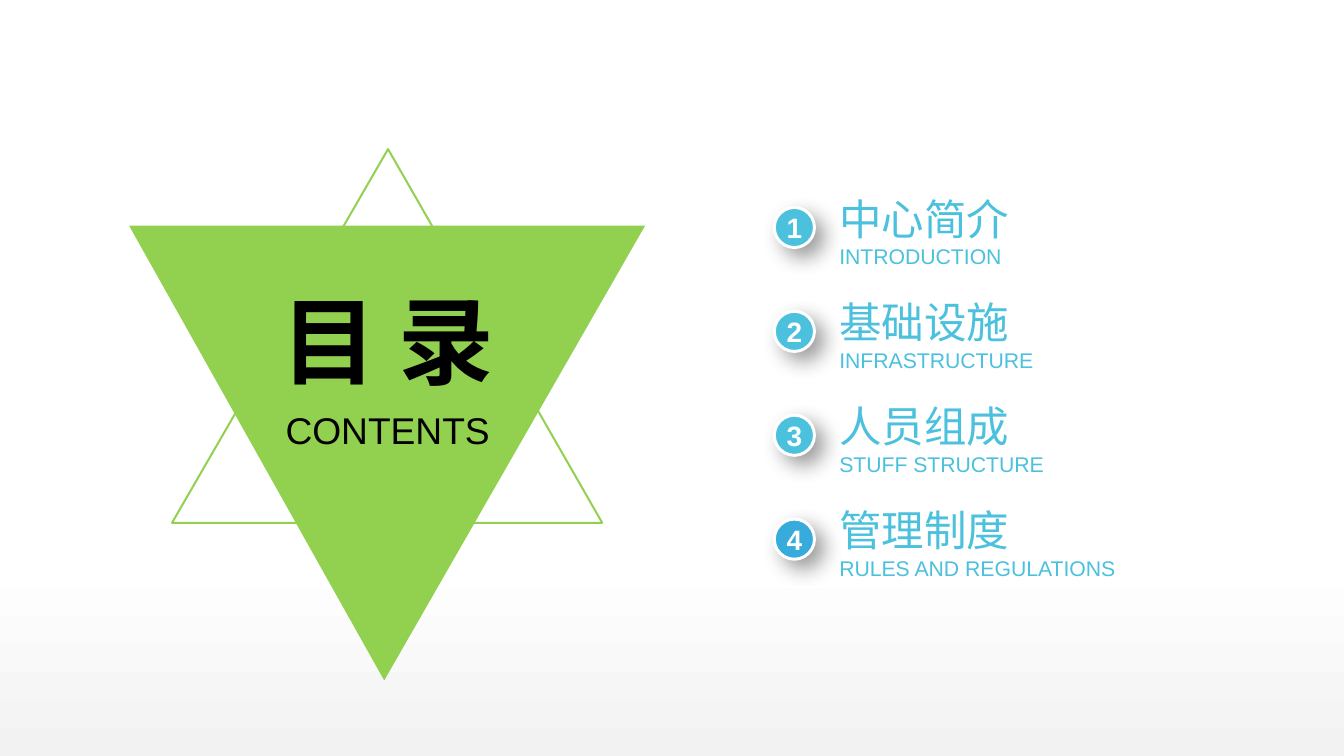
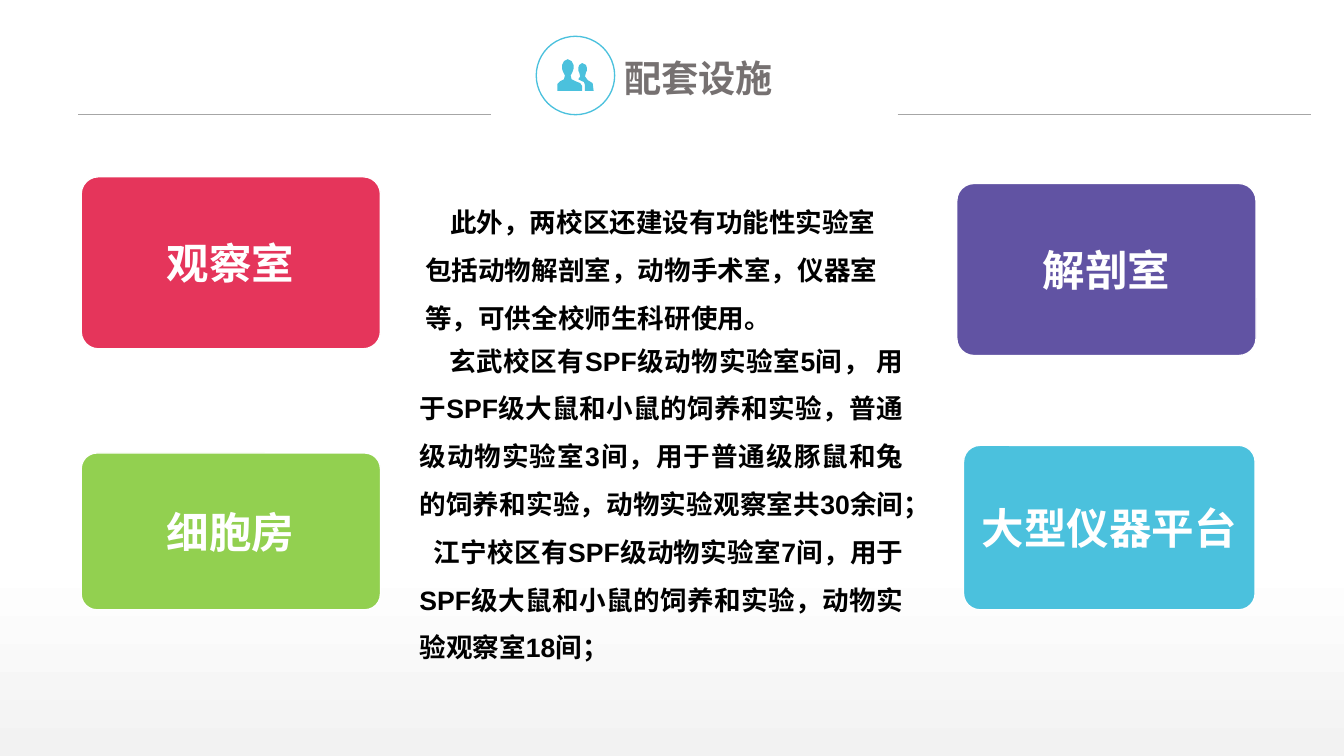
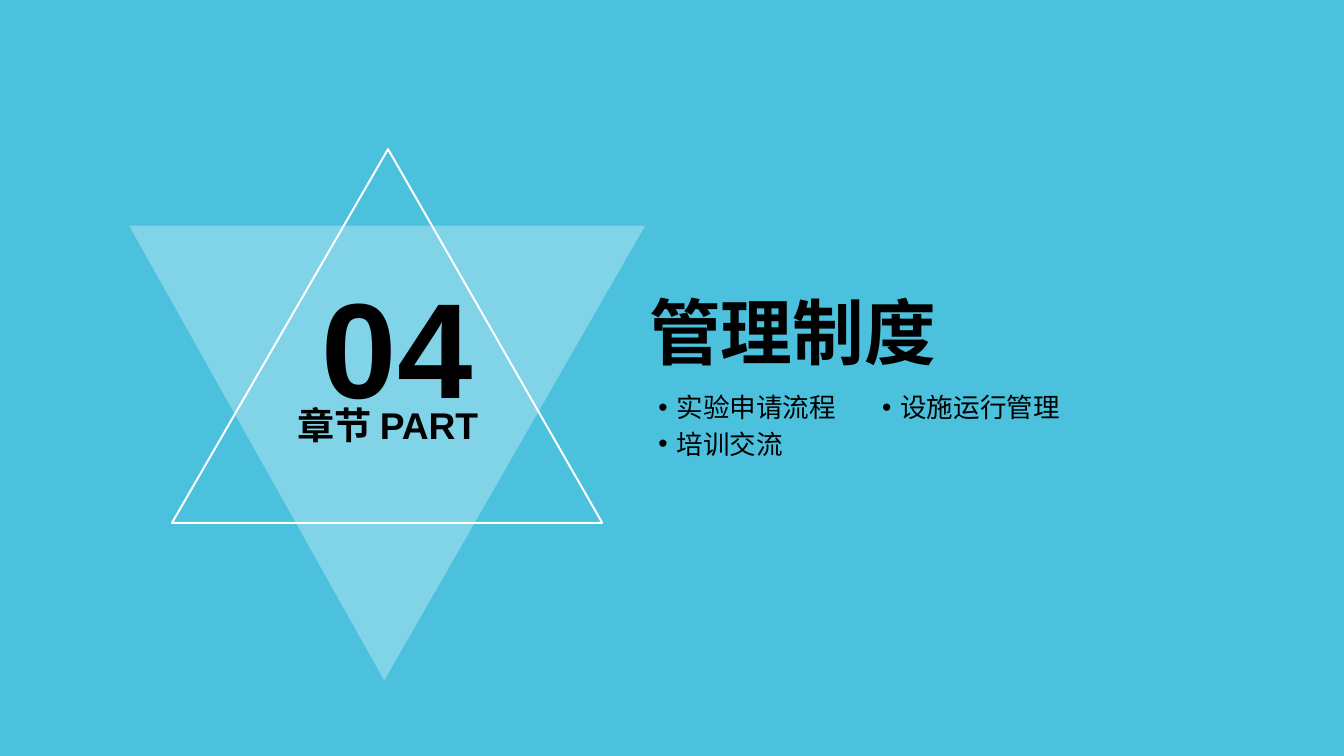
from dataclasses import dataclass
from typing import NamedTuple, Optional

from lxml import etree
from pptx import Presentation
from pptx import util as u
from pptx.dml.color import RGBColor
from pptx.enum import shapes as s
from pptx.enum import text as t
from pptx.oxml import ns

CELL = u.Inches(0.1)
COLS, ROWS = 140.6, 79.1

WHITE = RGBColor(0xFF, 0xFF, 0xFF)
BLACK = RGBColor(0, 0, 0)
MIST = RGBColor(0xF2, 0xF2, 0xF2)
RULE = RGBColor(0xA6, 0xA6, 0xA6)
SLATE = RGBColor(0x76, 0x71, 0x71)
AQUA = RGBColor(0x4B, 0xC1, 0xDD)
BLUE = RGBColor(0x36, 0xAB, 0xDC)
GREEN = RGBColor(0x92, 0xD0, 0x50)
RED = RGBColor(0xE5, 0x35, 0x5B)
PLUM = RGBColor(0x61, 0x53, 0xA3)

LATIN, HAN = "Arial", "Noto Sans CJK SC"
LEFT, MID, FULL = t.PP_ALIGN.LEFT, t.PP_ALIGN.CENTER, t.PP_ALIGN.JUSTIFY
TOP, CORE = t.MSO_ANCHOR.TOP, t.MSO_ANCHOR.MIDDLE


class Box(NamedTuple):
    x: float
    y: float
    w: float
    h: float


class Point(NamedTuple):
    x: float
    y: float


@dataclass
class Bit:
    words: str
    size: float
    color: RGBColor = BLACK
    bold: bool = False
    face: str = LATIN


@dataclass
class Para:
    bits: list[Bit]
    align: t.PP_ALIGN = LEFT
    dent: float = 0
    lead: Optional[float] = None
    dot: bool = False


@dataclass
class Item:
    name: str
    gloss: str
    color: RGBColor = AQUA


@dataclass
class Tile:
    box: Box
    name: str
    color: RGBColor


ITEMS = [
    Item("中心简介", "INTRODUCTION"),
    Item("基础设施", "INFRASTRUCTURE"),
    Item("人员组成", "STUFF STRUCTURE"),
    Item("管理制度", "RULES AND REGULATIONS", BLUE),
]
TILES = [
    Tile(Box(8.5, 18.5, 31.3, 18), "观察室", RED),
    Tile(Box(8.5, 47.4, 31.3, 16.4), "细胞房", GREEN),
    Tile(Box(100.8, 46.6, 30.5, 17.2), "大型仪器平台", AQUA),
    Tile(Box(100.1, 19.2, 31.3, 18), "解剖室", PLUM),
]
INTRO = "此外，两校区还建设有功能性实验室包括动物解剖室，动物手术室，仪器室等，可供全校师生科研使用。"
NORTH = ("玄武校区有SPF级动物实验室5间， 用于SPF级大鼠和小鼠的饲养和实验，普通级动物实验室3间，"
         "用于普通级豚鼠和兔的饲养和实验，动物实验观察室共30余间；")
SOUTH = "江宁校区有SPF级动物实验室7间，用于SPF级大鼠和小鼠的饲养和实验，动物实验观察室18间；"
TOPICS = ["实验申请流程", "设施运行管理", "培训交流"]

DOWN = [Point(13.5, 23.6), Point(67.5, 23.6), Point(40.2, 71.2)]
UP = [Point(40.6, 15.6), Point(63, 54.7), Point(18, 54.7)]
FRONT = [Point(*p) for p in (
    (60.2, 8.5), (59.8, 8.3), (59.7, 7.9), (59.9, 7.5), (60, 7.2), (60, 6.8),
    (59.8, 6.4), (59.4, 6.2), (59, 6.4), (58.8, 6.8), (58.8, 7.2), (58.9, 7.5),
    (59.1, 7.9), (59, 8.3), (58.6, 8.5), (58.3, 8.8), (58.3, 9.5), (60.9, 9.5),
    (60.9, 9), (60.7, 8.7))]
BACK = [Point(*p) for p in (
    (62.1, 9.5), (62, 8.7), (61.5, 8.4), (61.2, 8), (61.3, 7.6), (61.4, 7.4),
    (61.4, 7.1), (61.3, 6.8), (60.9, 6.6), (60.6, 6.8), (60.5, 7.1), (60.5, 7.4),
    (60.6, 7.6), (60.7, 8), (60.5, 8.3), (61.1, 8.6), (61.2, 8.9), (61.2, 9.5))]


def cells(n: float) -> int:
    return int(round(n * CELL))


def frame(box: Box) -> list[int]:
    return [cells(n) for n in box]


def child(root, tag: str, **attrs):
    return etree.SubElement(root, ns.qn(tag), {k: str(v) for k, v in attrs.items()})


def add_run(para, bit: Bit) -> None:
    run = para.add_run()
    run.text = bit.words
    font = run.font
    font.size, font.bold, font.name = u.Pt(bit.size), bit.bold, bit.face
    font.color.rgb = bit.color
    child(run.font._element, "a:ea", typeface=HAN)


def write(shape, paras: list[Para], inset: float = 0, anchor=CORE, wrap: bool = True) -> None:
    body = shape.text_frame
    body.auto_size = t.MSO_AUTO_SIZE.NONE
    body.word_wrap = wrap
    body.vertical_anchor = anchor
    body.margin_left = body.margin_right = cells(inset)
    body.margin_top = body.margin_bottom = cells(inset / 2)
    for i, item in enumerate(paras):
        para = body.add_paragraph() if i else body.paragraphs[0]
        para.alignment = item.align
        if item.lead:
            para.line_spacing = u.Pt(item.lead)
        props = para._p.get_or_add_pPr()
        if item.dot:
            props.set("marL", str(cells(1.9)))
            props.set("indent", str(cells(-1.9)))
            child(props, "a:buFont", typeface=LATIN)
            child(props, "a:buChar", char="•")
        elif item.dent:
            props.set("indent", str(cells(item.dent)))
        for bit in item.bits:
            add_run(para, bit)


def add_text(slide, box: Box, paras: list[Para], inset: float = 0, anchor=CORE, wrap: bool = True) -> None:
    write(slide.shapes.add_textbox(*frame(box)), paras, inset, anchor, wrap)


def set_title(slide, box: Box, para: Para) -> None:
    title = slide.shapes.title
    title.left, title.top, title.width, title.height = frame(box)
    write(title, [para])
    title.element.getparent().append(title.element)


def paint(shape, fill: Optional[RGBColor], line: Optional[RGBColor] = None, width: float = 1) -> None:
    shape.shadow.inherit = False
    if fill is None:
        shape.fill.background()
    else:
        shape.fill.solid()
        shape.fill.fore_color.rgb = fill
    if line is None:
        shape.line.fill.background()
    else:
        shape.line.color.rgb = line
        shape.line.width = u.Pt(width)


def add_form(slide, *loops: list[Point]):
    paths = [[(cells(p.x), cells(p.y)) for p in loop] for loop in loops]
    pen = slide.shapes.build_freeform(*paths[0][0])
    for i, path in enumerate(paths):
        if i:
            pen.move_to(*path[0])
        pen.add_line_segments(path[1:], close=True)
    return pen.convert_to_shape()


def add_star(slide, fill: RGBColor, line: RGBColor, alpha: int = 100) -> None:
    solid = add_form(slide, DOWN)
    paint(solid, fill)
    if alpha < 100:
        tint = solid.fill._xPr.find(".//" + ns.qn("a:srgbClr"))
        child(tint, "a:alpha", val=alpha * 1000)
    paint(add_form(slide, UP), None, line, 1.5)


def add_rule(slide, x: float, y: float, w: float) -> None:
    rule = slide.shapes.add_connector(
        s.MSO_CONNECTOR.STRAIGHT, cells(x), cells(y), cells(x + w), cells(y))
    rule.line.color.rgb = RULE
    rule.line.width = u.Pt(1)
    child(rule._element.spPr, "a:effectLst")


def cast(shape) -> None:
    effects = shape._element.spPr.find(ns.qn("a:effectLst"))
    glow = child(effects, "a:outerShdw", blurRad=u.Pt(16), dist=u.Pt(9),
                 dir=45 * 60000, algn="tl", rotWithShape=0)
    tint = child(glow, "a:srgbClr", val=str(BLACK))
    child(tint, "a:alpha", val=40000)


def add_item(slide, rank: int, item: Item) -> None:
    drop = 10.87 * rank
    disc = slide.shapes.add_shape(s.MSO_SHAPE.OVAL, *frame(Box(81, 21.7 + drop, 4.2, 4.2)))
    paint(disc, item.color, WHITE, 2.25)
    cast(disc)
    write(disc, [Para([Bit(str(rank + 1), 21.1, WHITE, True)], MID)], wrap=False)
    add_text(slide, Box(87.8, 20.1 + drop, 29.5, 8.1),
             [Para([Bit(item.name, 32, AQUA)]), Para([Bit(item.gloss, 16, AQUA)])])


def add_tile(slide, tile: Tile) -> None:
    card = slide.shapes.add_shape(s.MSO_SHAPE.ROUNDED_RECTANGLE, *frame(tile.box))
    card.adjustments[0] = 0.1
    paint(card, tile.color, WHITE)
    write(card, [Para([Bit(tile.name, 32, WHITE, True, HAN)], MID)], 1.1)


def draw_index(slide) -> None:
    add_star(slide, GREEN, GREEN)
    for rank, item in enumerate(ITEMS):
        add_item(slide, rank, item)
    set_title(slide, Box(26.2, 29.5, 28.7, 12.1), Para([Bit("目 录", 72, bold=True)], MID))
    add_text(slide, Box(27.8, 42.6, 25.5, 4.7), [Para([Bit("CONTENTS", 28)], MID)])


def draw_rooms(slide) -> None:
    for x in (8.2, 93.9):
        add_rule(slide, x, 12, 43.2)
    ring = slide.shapes.add_shape(s.MSO_SHAPE.OVAL, *frame(Box(56.1, 3.8, 8.2, 8.2)))
    paint(ring, None, AQUA)
    paint(add_form(slide, BACK, FRONT), AQUA)
    set_title(slide, Box(65.3, 5.3, 17.7, 5.7), Para([Bit("配套设施", 28, SLATE, True, HAN)]))
    for tile in TILES:
        add_tile(slide, tile)
    add_text(slide, Box(43.5, 19.4, 51.2, 15.4),
             [Para([Bit(INTRO, 20, bold=True)], LEFT, 2.6, 36)], 1, TOP)
    add_text(slide, Box(42.9, 33.9, 52.6, 40.6),
             [Para([Bit(words, 20, bold=True)], FULL, dent, 36)
              for words, dent in ((NORTH, 3.1), (SOUTH, 1.5))], 1, TOP)


def draw_part(slide) -> None:
    slide.background.fill.solid()
    slide.background.fill.fore_color.rgb = AQUA
    add_star(slide, WHITE, WHITE, 30)
    add_text(slide, Box(32.3, 27.4, 18.5, 17.2), [Para([Bit("04", 102, bold=True)], MID)])
    add_text(slide, Box(21.6, 42.1, 37.9, 4.7), [Para([Bit("章节 PART", 28, bold=True)], MID)])
    set_title(slide, Box(67.9, 30.1, 48.9, 9.1), Para([Bit("管理制度", 54, bold=True)]))
    for i, topic in enumerate(TOPICS):
        row, col = divmod(i, 2)
        add_text(slide, Box(67.9 + 23.4 * col, 40.4 + 3.8 * row, 20.7, 4.4),
                 [Para([Bit(topic, 20)], dot=True)], 1, wrap=False)


def set_ground(master) -> None:
    fill = master.background.fill
    fill.gradient()
    fill.gradient_angle = 90
    for stop, color, place in zip(fill.gradient_stops, (MIST, WHITE), (0, 0.26)):
        stop.color.rgb = color
        stop.position = place


def main() -> None:
    deck = Presentation()
    deck.slide_width, deck.slide_height = cells(COLS), cells(ROWS)
    set_ground(deck.slide_master)
    for draw in (draw_index, draw_rooms, draw_part):
        draw(deck.slides.add_slide(deck.slide_layouts[5]))
    deck.save("out.pptx")


if __name__ == "__main__":
    main()
